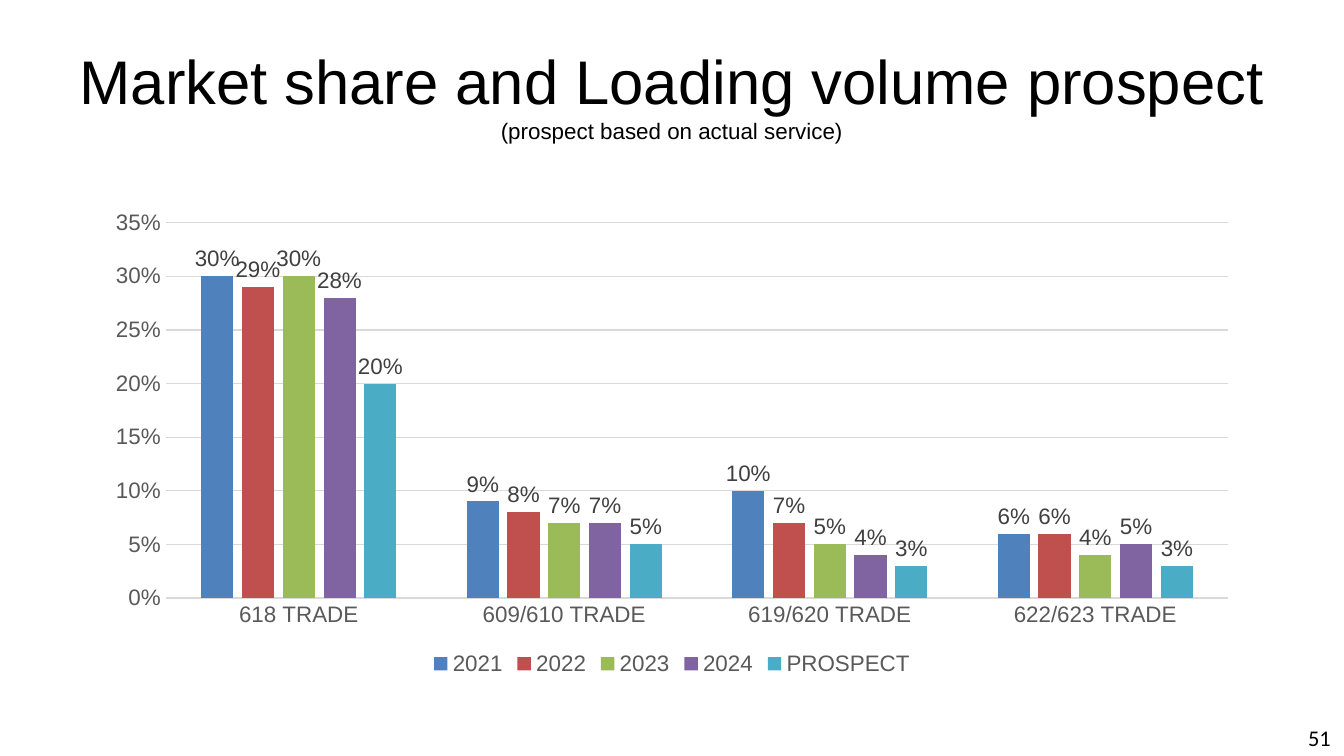
from pptx import Presentation
from pptx.chart.data import CategoryChartData
from pptx.dml.color import RGBColor
from pptx.enum.chart import (XL_CHART_TYPE, XL_LABEL_POSITION,
                             XL_LEGEND_POSITION, XL_TICK_MARK)
from pptx.enum.text import MSO_ANCHOR, MSO_AUTO_SIZE, PP_ALIGN
from pptx.util import Inches, Pt

WIDTH = 10
HEIGHT = WIDTH * 9 / 16
COLORS = {"text": "000000", "axis": "595959", "label": "404040", "grid": "D9D9D9"}
TRADES = ["618 TRADE", "609/610 TRADE", "619/620 TRADE", "622/623 TRADE"]
SHARES = {  # series name: (bar colour, share of each trade)
    "2021": ("4F81BD", (0.30, 0.09, 0.10, 0.06)),
    "2022": ("C0504D", (0.29, 0.08, 0.07, 0.06)),
    "2023": ("9BBB59", (0.30, 0.07, 0.05, 0.04)),
    "2024": ("8064A2", (0.28, 0.07, 0.04, 0.05)),
    "PROSPECT": ("4BACC6", (0.20, 0.05, 0.03, 0.03)),
}


def rgb(name):
    return RGBColor.from_string(COLORS[name])


def box(x, y, w, h):
    """Turn percentages of the slide's size into lengths."""
    return (Inches(x * WIDTH / 100), Inches(y * HEIGHT / 100),
            Inches(w * WIDTH / 100), Inches(h * HEIGHT / 100))


def style_font(font, size, color, name="Arial"):
    font.size, font.name = Pt(size), name
    font.color.rgb = rgb(color)


def style_line(line, color):
    line.color.rgb = rgb(color)
    line.width = Pt(0.75)


def add_run(p, text, size, name="Arial"):
    r = p.add_run()
    r.text = text
    style_font(r.font, size, "text", name)


def fill_title(s, heading, note):
    title = s.shapes.title
    title.left, title.top, title.width, title.height = box(5, 4, 90, 16.67)
    tf = title.text_frame
    tf.margin_left = tf.margin_right = tf.margin_top = tf.margin_bottom = 0
    tf.vertical_anchor = MSO_ANCHOR.MIDDLE
    tf.auto_size = MSO_AUTO_SIZE.NONE
    p = tf.paragraphs[0]
    p.alignment = PP_ALIGN.CENTER
    add_run(p, heading, 33)
    p.add_line_break()
    add_run(p, note, 12)


def style_axes(chart):
    for axis in (chart.category_axis, chart.value_axis):
        axis.major_tick_mark = axis.minor_tick_mark = XL_TICK_MARK.NONE
        style_font(axis.tick_labels.font, 12, "axis")
    style_line(chart.category_axis.format.line, "grid")
    values = chart.value_axis
    values.minimum_scale, values.maximum_scale, values.major_unit = 0, 0.35, 0.05
    values.format.line.fill.background()
    values.tick_labels.number_format = "0%"
    values.tick_labels.number_format_is_linked = False
    style_line(values.major_gridlines.format.line, "grid")


def style_series(series, color):
    series.format.fill.solid()
    series.format.fill.fore_color.rgb = RGBColor.from_string(color)
    series.invert_if_negative = False
    labels = series.data_labels
    labels.show_value = True
    labels.number_format = "0%"
    labels.number_format_is_linked = False
    labels.position = XL_LABEL_POSITION.OUTSIDE_END
    style_font(labels.font, 12, "label")


def add_share_chart(s):
    data = CategoryChartData(number_format="0%")
    data.categories = TRADES
    for name, (_, values) in SHARES.items():
        data.add_series(name, values)
    chart = s.shapes.add_chart(XL_CHART_TYPE.COLUMN_CLUSTERED,
                               *box(6.9, 26.6, 86.2, 63.5), data).chart
    style_font(chart.font, 10, "text")
    chart.has_title = False
    style_axes(chart)

    # Bars
    plot = chart.plots[0]
    plot.gap_width, plot.overlap = 219, -27
    plot.vary_by_categories = False
    for series in plot.series:
        style_series(series, SHARES[series.name][0])

    # Legend
    chart.has_legend = True
    chart.legend.position = XL_LEGEND_POSITION.BOTTOM
    chart.legend.include_in_layout = False
    style_font(chart.legend.font, 12, "axis")


def add_page_number(s, number):
    tf = s.shapes.add_textbox(*box(76.7, 94.9, 23.3, 5.3)).text_frame
    tf.word_wrap = True
    p = tf.paragraphs[0]
    p.alignment = PP_ALIGN.RIGHT
    add_run(p, number, 12, "Calibri")


def main():
    prs = Presentation()
    prs.slide_width, prs.slide_height = Inches(WIDTH), Inches(HEIGHT)
    s = prs.slides.add_slide(prs.slide_layouts[5])  # title only
    fill_title(s, "Market share and Loading volume prospect",
               "(prospect based on actual service)")
    add_share_chart(s)
    add_page_number(s, "51")
    prs.save("out.pptx")


if __name__ == "__main__":
    main()
